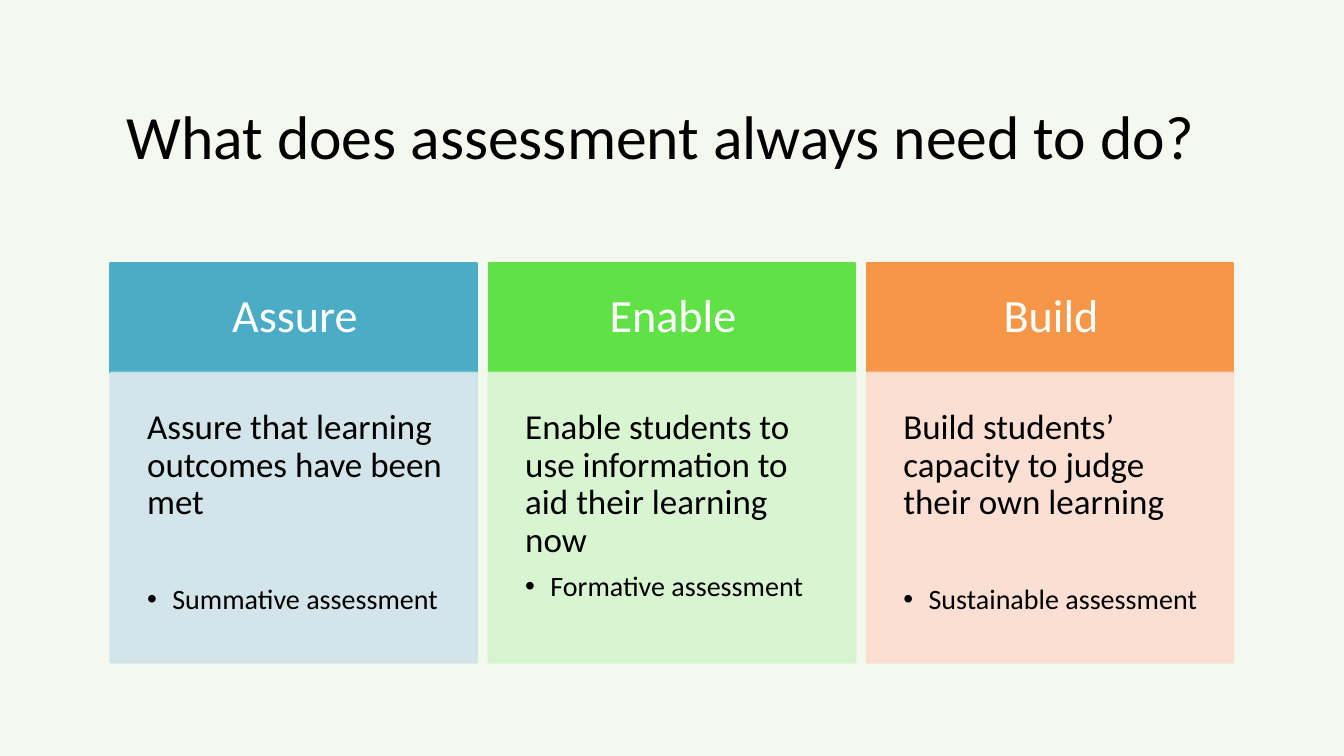
from lxml.etree import SubElement
from pptx import Presentation
from pptx.dml.color import RGBColor
from pptx.enum.shapes import MSO_SHAPE
from pptx.enum.text import MSO_ANCHOR, MSO_AUTO_SIZE, PP_ALIGN
from pptx.oxml.ns import qn
from pptx.util import Inches, Pt

COLORS = {
    "background": "F5F8EF",
    "text": "000000",
    "header text": "FFFFFF",
    "assure": "4BACC6",
    "assure pale": "D0E3EA",
    "enable": "60E146",
    "enable pale": "D6F4CE",
    "build": "F79646",
    "build pale": "FCDDCF",
}

PURPOSES = [
    ("Assure", "Assure that learning outcomes have been met", "Summative assessment", 36),
    ("Enable", "Enable students to use information to aid their learning now", "Formative assessment", 0),
    ("Build", "Build students’ capacity to judge their own learning", "Sustainable assessment", 36),
]

COLUMN_WIDTH = 3.63
COLUMN_STEP = 3.75
HEADER_HEIGHT = 1.09


def color(name):
    return RGBColor.from_string(COLORS[name])


def style(paragraph, size, color_name, after=0):
    paragraph.font.name = "Calibri"
    paragraph.font.size = Pt(size)
    paragraph.font.color.rgb = color(color_name)
    paragraph.line_spacing = 0.9
    paragraph.space_after = Pt(after)


def add_panel(slide, left, top, width, height, fill_name, inset, opacity=100):
    panel = slide.shapes.add_shape(
        MSO_SHAPE.RECTANGLE, Inches(left), Inches(top), Inches(width), Inches(height))
    panel.shadow.inherit = False
    panel.fill.solid()
    panel.fill.fore_color.rgb = color(fill_name)
    panel.line.color.rgb = color(fill_name)
    panel.line.width = Pt(2)
    if opacity < 100:
        for shade in panel.element.spPr.iter(qn("a:srgbClr")):
            SubElement(shade, qn("a:alpha"), val=str(opacity * 1000))
    frame = panel.text_frame
    frame.word_wrap = True
    frame.margin_left = frame.margin_top = frame.margin_bottom = Inches(inset)
    frame.margin_right = Inches(inset - 0.02)
    return frame


def add_bullet(paragraph):
    properties = paragraph._p.get_or_add_pPr()
    properties.set("marL", str(Inches(0.25)))
    properties.set("indent", str(-Inches(0.25)))
    SubElement(properties, qn("a:buFont"), typeface="Arial")
    SubElement(properties, qn("a:buChar"), char="•")


def add_title(slide, left, top, width, height):
    title = slide.shapes.title
    title.left, title.top = Inches(left), Inches(top)
    title.width, title.height = Inches(width), Inches(height)
    frame = title.text_frame
    frame.text = "What does assessment always need to do?"
    frame.word_wrap = True
    frame.auto_size = MSO_AUTO_SIZE.NONE
    frame.vertical_anchor = MSO_ANCHOR.MIDDLE
    heading = frame.paragraphs[0]
    heading.alignment = PP_ALIGN.CENTER
    style(heading, 44, "text")


def add_purpose(slide, left, top, width, height, name, aim, kind, gap):
    header = add_panel(slide, left, top, width, HEADER_HEIGHT, name.lower(), 0.29)
    header.vertical_anchor = MSO_ANCHOR.MIDDLE
    header.text = name
    label = header.paragraphs[0]
    label.alignment = PP_ALIGN.CENTER
    style(label, 33, "header text")

    body = add_panel(slide, left, top + HEADER_HEIGHT, width, height - HEADER_HEIGHT,
                     f"{name.lower()} pale", 0.36, opacity=90)
    body.vertical_anchor = MSO_ANCHOR.TOP
    body.text = aim
    statement = body.paragraphs[0]
    statement.alignment = PP_ALIGN.LEFT
    style(statement, 25, "text", after=8.75)
    assessment = body.add_paragraph()
    assessment.text = kind
    assessment.level = 1
    assessment.alignment = PP_ALIGN.LEFT
    style(assessment, 20, "text", after=3)
    assessment.space_before = Pt(gap)
    add_bullet(assessment)


def main():
    deck = Presentation()
    deck.slide_width, deck.slide_height = Inches(13.33), Inches(7.5)
    slide = deck.slides.add_slide(deck.slide_layouts[5])
    slide.background.fill.solid()
    slide.background.fill.fore_color.rgb = color("background")
    add_title(slide, 0.53, 0.66, 12.05, 1.45)
    for column, purpose in enumerate(PURPOSES):
        add_purpose(slide, 1.1 + column * COLUMN_STEP, 2.61, COLUMN_WIDTH, 3.96, *purpose)
    deck.save("out.pptx")


if __name__ == "__main__":
    main()
